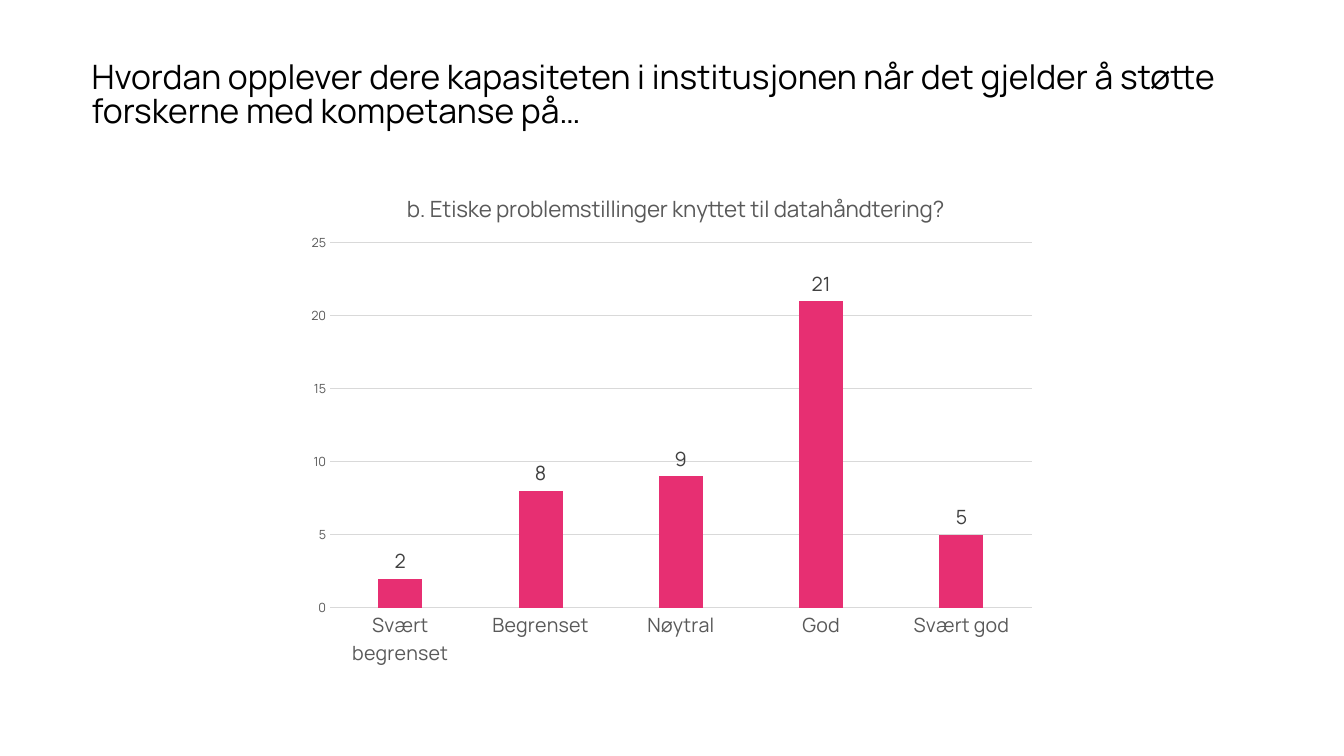
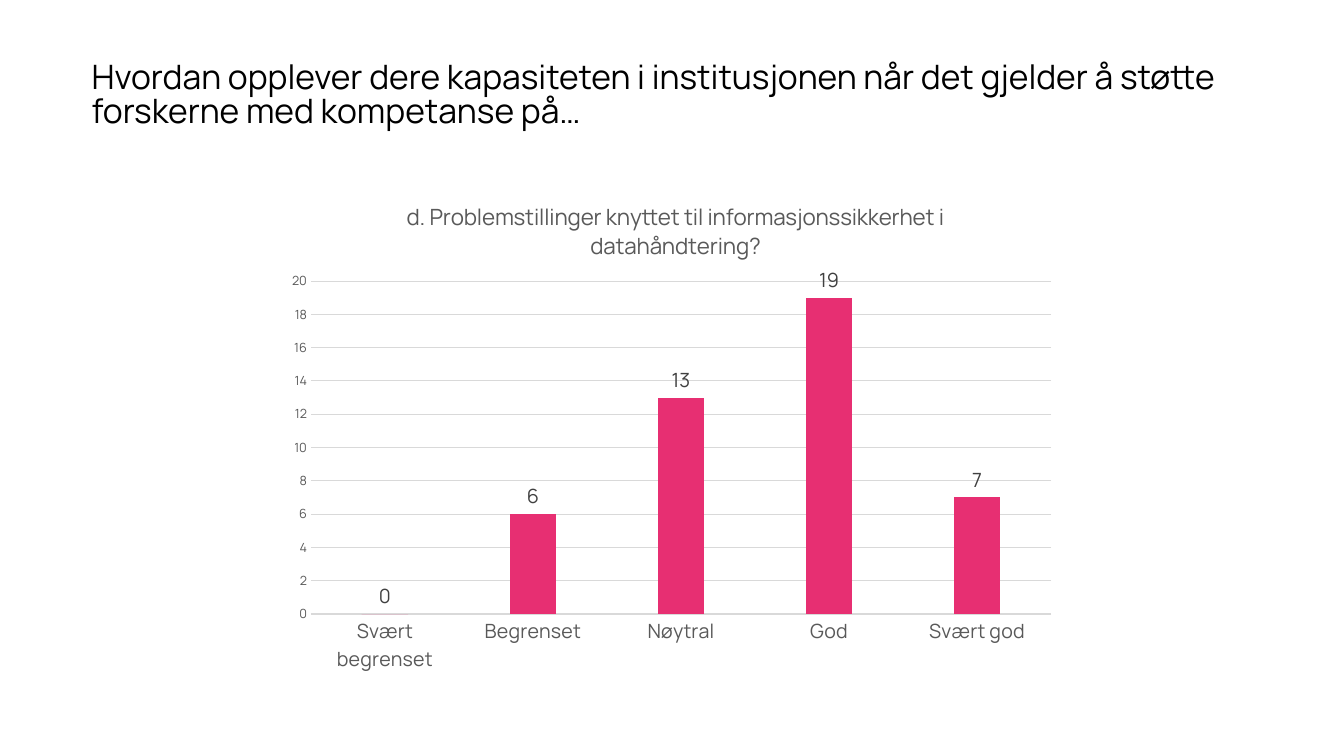
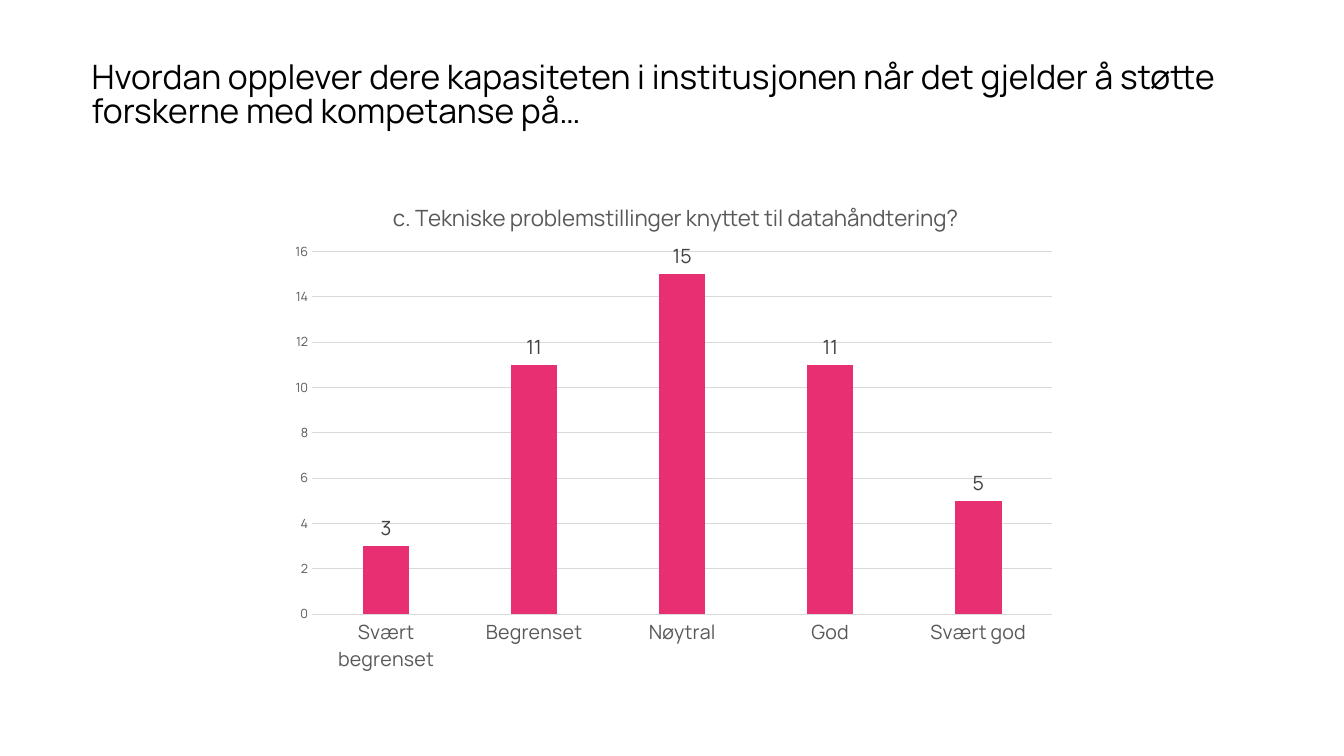
from pptx import Presentation
from pptx.chart.data import CategoryChartData
from pptx.dml.color import RGBColor
from pptx.enum.chart import XL_CHART_TYPE, XL_LABEL_POSITION, XL_TICK_MARK
from pptx.enum.text import MSO_ANCHOR, MSO_AUTO_SIZE, PP_ALIGN
from pptx.oxml import parse_xml
from pptx.oxml.ns import nsdecls
from pptx.util import Cm, Pt

COLUMN = XL_CHART_TYPE.COLUMN_CLUSTERED
OUTSIDE = XL_LABEL_POSITION.OUTSIDE_END
NO_TICK = XL_TICK_MARK.NONE
TOP, NO_FIT = MSO_ANCHOR.TOP, MSO_AUTO_SIZE.NONE
LEFT, CENTER = PP_ALIGN.LEFT, PP_ALIGN.CENTER

# Content
HEAD = ("Hvordan opplever dere kapasiteten i institusjonen når det gjelder "
        "å støtte forskerne med kompetanse på…")
CATS = ["Svært begrenset", "Begrenset", "Nøytral", "God", "Svært god"]
# box in cm; top of plot and left of title in percent of the chart
CHARTS = [
    dict(title="b. Etiske problemstillinger knyttet til datahåndtering?",
         vals=[2, 8, 9, 21, 5], max=25, step=5,
         box=(7.49, 4.19, 18.87, 12.88), top=15, left=14.1),
    dict(title="d. Problemstillinger knyttet til informasjonssikkerhet i "
               "datahåndtering?",
         vals=[0, 6, 13, 19, 7], max=20, step=2,
         box=(6.96, 4.39, 19.91, 12.83), top=21, left=16),
    dict(title="c. Tekniske problemstillinger knyttet til datahåndtering?",
         vals=[3, 11, 15, 11, 5], max=16, step=2,
         box=(6.99, 4.42, 19.91, 12.8), top=15, left=14.1),
]

# Shared style
FONT = "Manrope"
COLORS = dict(text="000000", label="404040", axis="595959",
              grid="D9D9D9", bar="E72F72")
HEAD_BOX = (2.31, 1.55, 30, 3.4)
TITLE_TOP, PLOT_LEFT, PLOT_WIDTH, PLOT_END = 4.2, 4.4, 93.7, 86.4


def color(name):
    return RGBColor.from_string(COLORS[name])


def style(font, size, name):
    font.name, font.size, font.bold = FONT, Pt(size), False
    font.color.rgb = color(name)


def write(frame, text, size=16, ink="axis", align=CENTER, space=None):
    frame.text = text
    para = frame.paragraphs[0]
    para.alignment = align
    if space:
        para.line_spacing = space
    style(para.runs[0].font, size, ink)


def rule(line):
    line.color.rgb = color("grid")
    line.width = Pt(0.75)


def place(parent, inner=False, **parts):
    """Set a manual layout, given in percent of the chart."""
    for old in parent.xpath("c:layout"):
        parent.remove(old)
    target = '<c:layoutTarget val="inner"/>' if inner else ""
    modes = "".join(f'<c:{k}Mode val="edge"/>' for k in "xy")
    sizes = "".join(f'<c:{k} val="{v / 100:.3f}"/>' for k, v in parts.items())
    layout = parse_xml(f'<c:layout {nsdecls("c")}><c:manualLayout>{target}'
                       f'{modes}{sizes}</c:manualLayout></c:layout>')
    parent.insert(1 if parent.xpath("c:tx") else 0, layout)


def add_head(slide):
    head = slide.shapes.title
    head.left, head.top, head.width, head.height = map(Cm, HEAD_BOX)
    frame = head.text_frame
    frame.margin_left = frame.margin_right = 0
    frame.margin_top = frame.margin_bottom = 0
    frame.vertical_anchor, frame.word_wrap = TOP, True
    frame.auto_size = NO_FIT
    write(frame, HEAD, size=24, ink="text", align=LEFT, space=0.86)


def add_bars(slide, item):
    data = CategoryChartData(number_format="0")
    data.categories = CATS
    data.add_series("Series 1", item["vals"])
    box = map(Cm, item["box"])
    chart = slide.shapes.add_chart(COLUMN, *box, data).chart
    style(chart.font, 10, "text")
    chart.has_legend = False

    # Title and plot area
    write(chart.chart_title.text_frame, item["title"])
    chart.chart_title.include_in_layout = False
    tree = chart.element
    place(tree.xpath("c:chart/c:title")[0], x=item["left"], y=TITLE_TOP)
    place(tree.xpath("c:chart/c:plotArea")[0], inner=True,
          x=PLOT_LEFT, y=item["top"], w=PLOT_WIDTH,
          h=PLOT_END - item["top"])

    # Bars and labels
    plot = chart.plots[0]
    plot.gap_width, plot.overlap = 219, -27
    plot.vary_by_categories = False
    fill = plot.series[0].format.fill
    fill.solid()
    fill.fore_color.rgb = color("bar")
    plot.has_data_labels = True
    labels = plot.data_labels
    labels.show_value, labels.position = True, OUTSIDE
    style(labels.font, 14, "label")

    # Axes
    cat, val = chart.category_axis, chart.value_axis
    for axis, size in ((cat, 14), (val, 9)):
        axis.major_tick_mark = axis.minor_tick_mark = NO_TICK
        style(axis.tick_labels.font, size, "axis")
    rule(cat.format.line)
    val.format.line.fill.background()
    val.minimum_scale, val.maximum_scale = 0, item["max"]
    val.major_unit = item["step"]
    val.has_major_gridlines = True
    rule(val.major_gridlines.format.line)


def main():
    deck = Presentation()
    deck.slide_width, deck.slide_height = Cm(33.87), Cm(19.05)
    for item in CHARTS:
        slide = deck.slides.add_slide(deck.slide_layouts[5])
        add_head(slide)
        add_bars(slide, item)
    deck.save("out.pptx")


if __name__ == "__main__":
    main()
